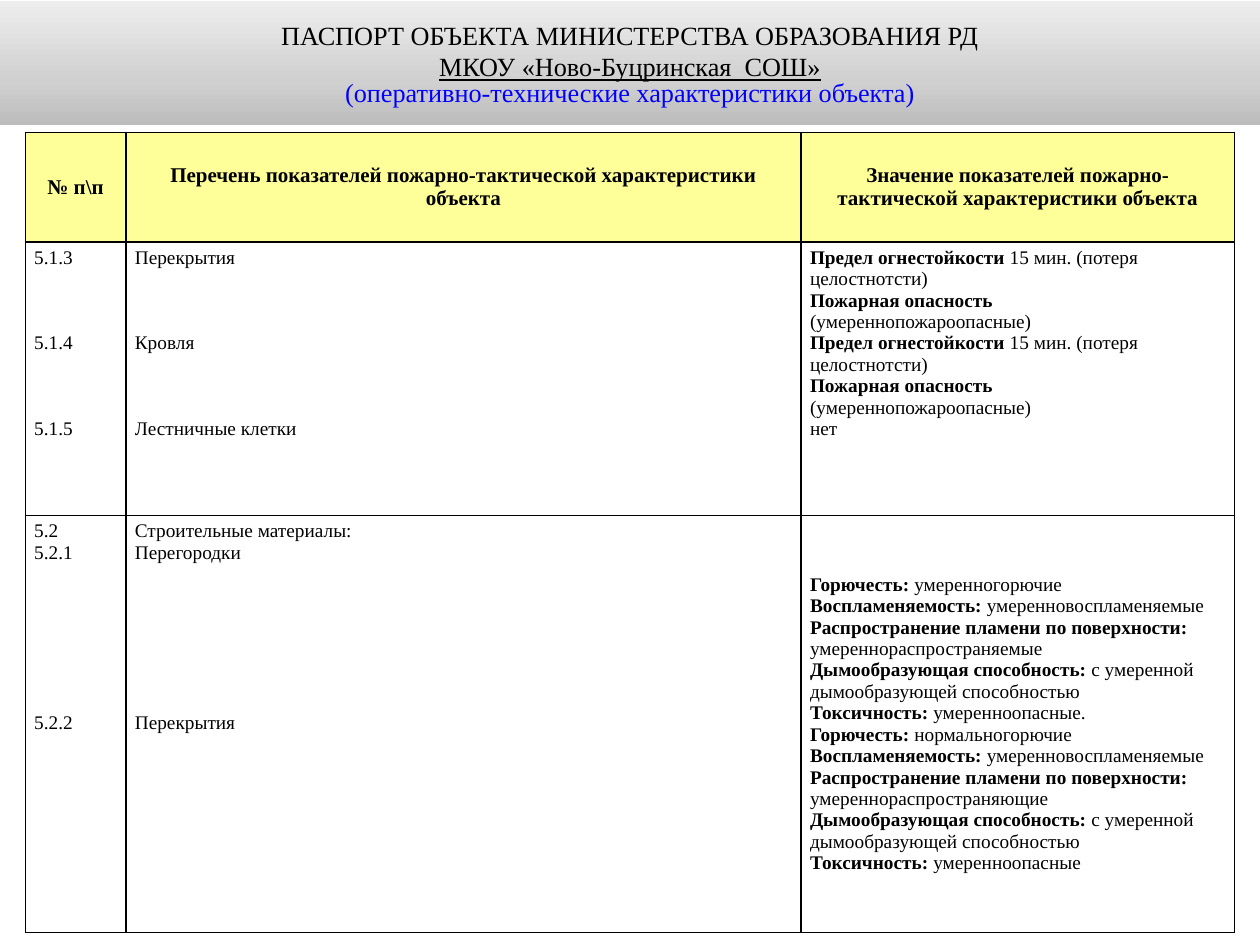
from copy import deepcopy
from dataclasses import dataclass

from lxml.etree import SubElement
from pptx import Presentation
from pptx.dml.color import RGBColor
from pptx.enum.text import MSO_ANCHOR as Anchor, MSO_AUTO_SIZE as AutoSize, PP_ALIGN as Align
from pptx.oxml.ns import qn
from pptx.util import Cm, Pt


@dataclass(frozen=True)
class Theme:
    font: str = "Times New Roman"
    title_size: int = 15
    header_size: int = 12
    body_size: int = 11
    body_line: float = 12.2  # height of one body line, points
    text: str = "000000"
    accent: str = "0000FF"
    header_fill: str = "FFFF99"
    body_fill: str = "FFFFFF"
    border: str = "000000"
    banner: tuple = ((0, "BCBCBC"), (0.35, "D0D0D0"), (1, "EDEDED"))


THEME = Theme()

# Content: title lines are (text, colour, underlined, line spacing)
TITLE = [
    ("ПАСПОРТ ОБЪЕКТА МИНИСТЕРСТВА ОБРАЗОВАНИЯ РД", THEME.text, False, 1.0),
    ("МКОУ «Ново-Буцринская  СОШ»", THEME.text, True, 1.0),
    ("(оперативно-технические характеристики объекта)", THEME.accent, False, 0.8),
]
HEADERS = [
    "№ п\\п",
    "Перечень показателей пожарно-тактической характеристики объекта",
    "Значение показателей пожарно-тактической характеристики объекта",
]
# Body paragraphs are (bold label, plain value, free lines above)
FIRE_RATING = [
    ("Предел огнестойкости ", "15 мин. (потеря целостнотсти)", 0),
    ("Пожарная опасность", "", 0),
    ("", "(умереннопожароопасные)", 0),
]


def material(burning, spreading, toxicity):
    return [
        ("Горючесть:", f" {burning}", 0),
        ("Воспламеняемость: ", "умеренновоспламеняемые", 0),
        ("Распространение пламени по поверхности:", "", 0),
        ("", spreading, 0),
        ("Дымообразующая способность: ", "с умеренной дымообразующей способностью", 0),
        ("Токсичность:", f" {toxicity}", 0),
    ]


# Each row: numbered indicators with free lines above, values, anchor of the values
ROWS = [
    (
        [("5.1.3", "Перекрытия", 0), ("5.1.4", "Кровля", 3), ("5.1.5", "Лестничные клетки", 3)],
        FIRE_RATING * 2 + [("", "нет", 0)],
        Anchor.TOP,
    ),
    (
        [("5.2", "Строительные материалы:", 0), ("5.2.1", "Перегородки", 0),
         ("5.2.2", "Перекрытия", 7)],
        material("умеренногорючие", "умереннораспространяемые", "умеренноопасные.")
        + material("нормальногорючие", "умереннораспространяющие", "умеренноопасные"),
        Anchor.MIDDLE,
    ),
]
COLUMN_WIDTHS = [Cm(2.03), Cm(13.61), Cm(8.74)]
ROW_HEIGHTS = [Cm(2.21), Cm(5.51), Cm(8.41)]


def add_run(paragraph, text, size, color=THEME.text, bold=False, underline=False):
    run = paragraph.add_run()
    run.text = text
    font = run.font
    font.name, font.size = THEME.font, Pt(size)
    font.bold, font.underline = bold, underline
    font.color.rgb = RGBColor.from_string(color)


def paragraphs(frame, items):
    """Yield a paragraph of the frame for each item."""
    for index, item in enumerate(items):
        yield (frame.add_paragraph() if index else frame.paragraphs[0]), item


def style_cell(cell, fill, anchor):
    properties = cell._tc.get_or_add_tcPr()
    for side in ("a:lnL", "a:lnR", "a:lnT", "a:lnB"):
        line = SubElement(properties, qn(side), w=str(Pt(1)))
        solid = SubElement(line, qn("a:solidFill"))
        SubElement(solid, qn("a:srgbClr"), val=THEME.border)
    cell.fill.solid()
    cell.fill.fore_color.rgb = RGBColor.from_string(fill)
    cell.margin_left = cell.margin_right = Cm(0.18)
    cell.margin_top = cell.margin_bottom = Cm(0.1)
    cell.vertical_anchor = anchor


def fill_body_cell(cell, items, anchor=Anchor.TOP):
    style_cell(cell, THEME.body_fill, anchor)
    for paragraph, (label, value, free_lines) in paragraphs(cell.text_frame, items):
        paragraph.space_before = Pt(free_lines * THEME.body_line)
        for text, bold in ((label, True), (value, False)):
            if text:
                add_run(paragraph, text, THEME.body_size, bold=bold)


def build_title(slide):
    title = slide.shapes.title
    title.left, title.top, title.width, title.height = Cm(0), Cm(0.03), Cm(25.4), Cm(2.49)
    # Three-stop gradient, dark at the bottom
    title.fill.gradient()
    title.fill.gradient_angle = 90
    stop_list = title._element.find(".//" + qn("a:gsLst"))
    stop_list.insert(1, deepcopy(stop_list[0]))
    for stop, (position, color) in zip(title.fill.gradient_stops, THEME.banner):
        stop.position = position
        stop.color.rgb = RGBColor.from_string(color)
    frame = title.text_frame
    frame.word_wrap = True
    frame.auto_size = AutoSize.NONE
    frame.vertical_anchor = Anchor.MIDDLE
    for paragraph, (text, color, underline, spacing) in paragraphs(frame, TITLE):
        paragraph.alignment = Align.CENTER
        paragraph.line_spacing = spacing
        add_run(paragraph, text, THEME.title_size, color, underline=underline)


def build_table(slide):
    table = slide.shapes.add_table(
        len(ROW_HEIGHTS), len(COLUMN_WIDTHS), Cm(0.51), Cm(2.67),
        sum(COLUMN_WIDTHS), sum(ROW_HEIGHTS),
    ).table
    table.horz_banding = False
    for column, width in zip(table.columns, COLUMN_WIDTHS):
        column.width = width
    for row, height in zip(table.rows, ROW_HEIGHTS):
        row.height = height
    # Header row
    for cell, text in zip(table.rows[0].cells, HEADERS):
        style_cell(cell, THEME.header_fill, Anchor.MIDDLE)
        paragraph = cell.text_frame.paragraphs[0]
        paragraph.alignment = Align.CENTER
        add_run(paragraph, text, THEME.header_size, bold=True)
    # Body rows
    for index, (indicators, values, anchor) in enumerate(ROWS, start=1):
        fill_body_cell(table.cell(index, 0), [("", number, gap) for number, _, gap in indicators])
        fill_body_cell(table.cell(index, 1), [("", name, gap) for _, name, gap in indicators])
        fill_body_cell(table.cell(index, 2), values, anchor)


def main():
    presentation = Presentation()
    presentation.slide_width, presentation.slide_height = Cm(25.4), Cm(19.05)
    slide = presentation.slides.add_slide(presentation.slide_layouts[5])
    build_title(slide)
    build_table(slide)
    presentation.save("out.pptx")


if __name__ == "__main__":
    main()
